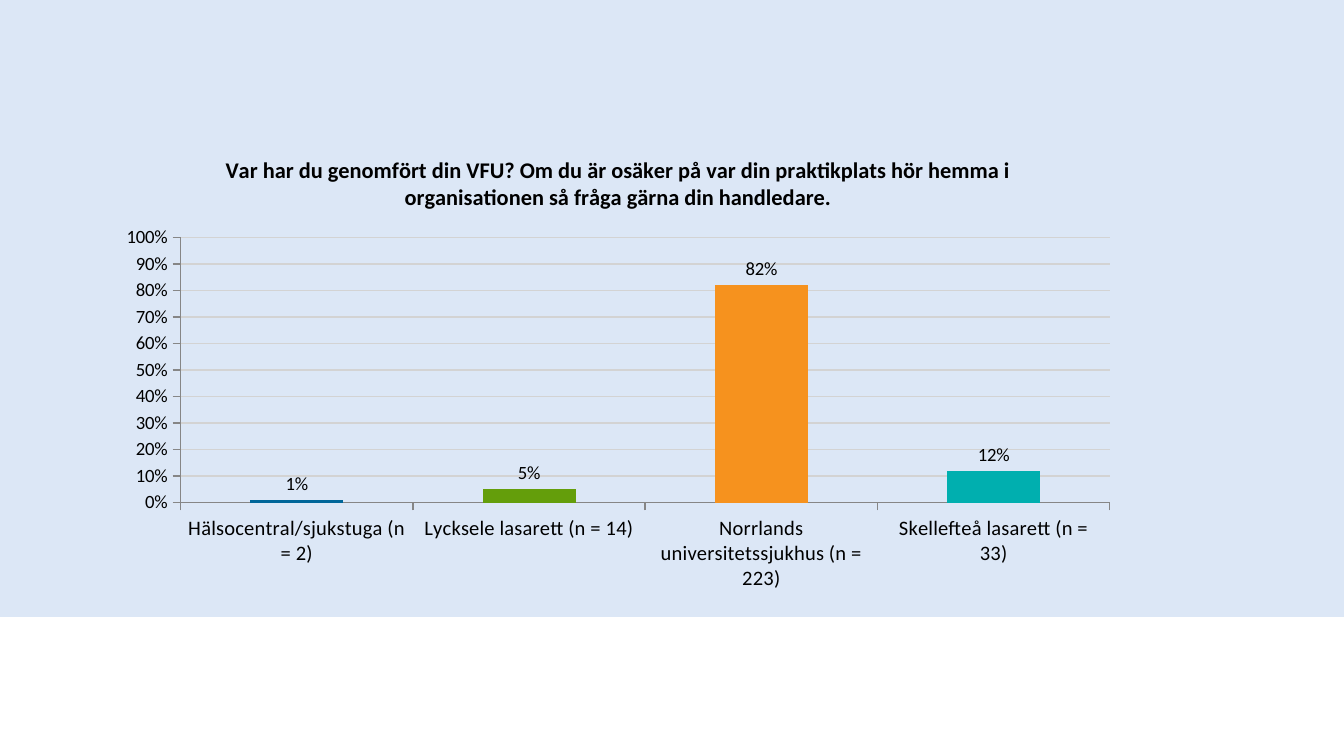
from pptx import Presentation
from pptx import util as u
from pptx.chart.data import CategoryChartData
from pptx.dml.color import RGBColor
from pptx.enum import chart as ch
from pptx.enum import shapes

PALE_BLUE = RGBColor(0xDC, 0xE7, 0xF6)
BLACK = RGBColor(0, 0, 0)
AXIS_GREY = RGBColor(0x86, 0x86, 0x86)
GRID_GREY = RGBColor(0xD3, 0xD3, 0xD3)
BLUE = RGBColor(0x00, 0x66, 0x99)
GREEN = RGBColor(0x64, 0x9E, 0x0B)
ORANGE = RGBColor(0xF6, 0x92, 0x1E)
TEAL = RGBColor(0x00, 0xAF, 0xAF)

QUESTION = ("Var har du genomfört din VFU? Om du är osäker på var din praktikplats "
            "hör hemma i organisationen så fråga gärna din handledare.")
WORKPLACES = [
    ("Hälsocentral/sjukstuga (n = 2)", 0.01, BLUE),
    ("Lycksele lasarett (n = 14)", 0.05, GREEN),
    ("Norrlands universitetssjukhus (n = 223)", 0.82, ORANGE),
    ("Skellefteå lasarett (n = 33)", 0.12, TEAL),
]


def style_font(font, size, bold=False):
    font.name = "Calibri"
    font.size = u.Pt(size)
    font.bold = bold
    font.color.rgb = BLACK


def add_backdrop(slide, left, top, width, height):
    backdrop = slide.shapes.add_shape(shapes.MSO_SHAPE.RECTANGLE, left, top, width, height)
    backdrop.shadow.inherit = False
    backdrop.fill.solid()
    backdrop.fill.fore_color.rgb = PALE_BLUE
    backdrop.line.fill.background()


def style_axis(axis, size):
    axis.major_tick_mark = ch.XL_TICK_MARK.OUTSIDE
    axis.minor_tick_mark = ch.XL_TICK_MARK.NONE
    axis.format.line.color.rgb = AXIS_GREY
    axis.format.line.width = u.Pt(0.75)
    style_font(axis.tick_labels.font, size)


def add_answer_chart(slide, left, top, width, height):
    answers = CategoryChartData(number_format="0%")
    answers.categories = [name for name, _, _ in WORKPLACES]
    answers.add_series("Series 1", [share for _, share, _ in WORKPLACES])
    chart = slide.shapes.add_chart(
        ch.XL_CHART_TYPE.COLUMN_CLUSTERED, left, top, width, height, answers).chart
    style_font(chart.font, 18)
    chart.has_legend = False

    question = chart.chart_title.text_frame.paragraphs[0].add_run()
    question.text = QUESTION
    style_font(question.font, 12, bold=True)
    chart.chart_title.include_in_layout = False

    style_axis(chart.category_axis, 11)
    percent_axis = chart.value_axis
    style_axis(percent_axis, 10)
    percent_axis.minimum_scale = 0
    percent_axis.maximum_scale = 1
    percent_axis.major_unit = 0.1
    percent_axis.tick_labels.number_format = "0%"
    percent_axis.tick_labels.number_format_is_linked = False
    percent_axis.major_gridlines.format.line.color.rgb = GRID_GREY
    percent_axis.major_gridlines.format.line.width = u.Pt(0.75)

    columns = chart.plots[0]
    columns.gap_width = 150
    columns.vary_by_categories = False
    shares = columns.series[0]
    shares.format.fill.solid()
    shares.format.fill.fore_color.rgb = BLUE
    for index, (_, _, color) in enumerate(WORKPLACES):
        fill = shares.points[index].format.fill
        fill.solid()
        fill.fore_color.rgb = color

    labels = shares.data_labels
    labels.show_value = True
    labels.position = ch.XL_LABEL_POSITION.OUTSIDE_END
    labels.number_format = "0%"
    labels.number_format_is_linked = False
    style_font(labels.font, 10)


def main():
    deck = Presentation()
    deck.slide_width = u.Inches(10)
    deck.slide_height = deck.slide_width * 9 // 16
    slide = deck.slides.add_slide(deck.slide_layouts[6])
    add_backdrop(slide, 0, 0, deck.slide_width, u.Inches(4.59))
    add_answer_chart(slide, u.Inches(0.79), u.Inches(1), u.Inches(7.62), u.Inches(3.47))
    deck.save("out.pptx")


if __name__ == "__main__":
    main()
